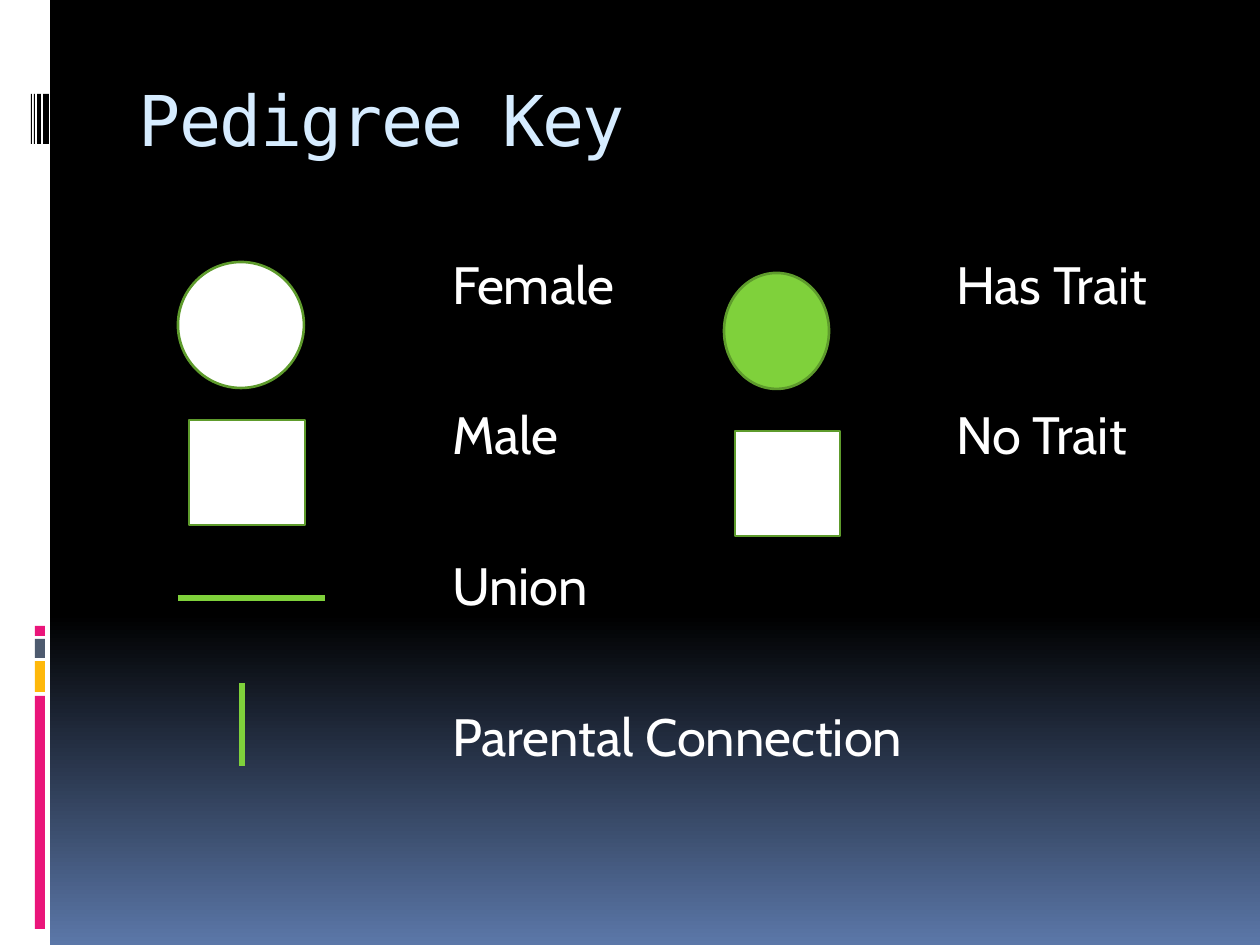
"""Builds the pedigree key slide."""
import dataclasses

import pptx
import pptx.dml.color
import pptx.enum.shapes
import pptx.enum.text
import pptx.oxml.ns
import pptx.util
from lxml import etree

SHAPES = pptx.enum.shapes.MSO_SHAPE


@dataclasses.dataclass(frozen=True)
class Theme:
    white: str = "FFFFFF"
    black: str = "000000"
    blue: str = "5B77A8"
    pink: str = "EA157A"
    amber: str = "FEB80A"
    slate: str = "4E5B6F"
    green: str = "7FD13B"
    outline: str = "5E9B2C"
    title: str = "D6ECFF"
    title_font: str = "DejaVu Sans Mono"
    body_font: str = "Cabin"
    title_size: int = 40
    body_size: int = 30


def px(length):
    return pptx.util.Emu(round(length * 914400 / 126))


def rgb(color):
    return pptx.dml.color.RGBColor.from_string(color)


def write(para, text, font, size, color, spacing=0):
    span = para.add_run()
    span.text = text
    span.font.name = font
    span.font.size = pptx.util.Pt(size)
    span.font.color.rgb = rgb(color)
    if spacing:
        span.font._element.set("spc", str(spacing))


class Slide:
    def __init__(self, deck, theme):
        self.theme = theme
        self.page = deck.slides.add_slide(deck.slide_layouts[1])

    def background(self, start, end, hold, angle):
        fill = self.page.background.fill
        fill.gradient()
        fill.gradient_angle = angle
        for stop, color, position in zip(fill.gradient_stops, (start, end), (hold, 1)):
            stop.color.rgb = rgb(color)
            stop.position = position

    def place(self, box, left, top, width, height, inset_left, inset_top):
        box.left, box.top, box.width, box.height = map(px, (left, top, width, height))
        frame = box.text_frame
        frame.word_wrap = True
        frame.auto_size = pptx.enum.text.MSO_AUTO_SIZE.NONE
        frame.vertical_anchor = pptx.enum.text.MSO_ANCHOR.TOP
        frame.margin_left, frame.margin_top = px(inset_left), px(inset_top)
        return frame

    def title(self, text, *area, **insets):
        para = self.place(self.page.shapes.title, *area, **insets).paragraphs[0]
        para.alignment = pptx.enum.text.PP_ALIGN.LEFT
        write(para, text, font=self.theme.title_font, size=self.theme.title_size,
              color=self.theme.title, spacing=-100)

    def labels(self, rows, *area, tab, gap, **insets):
        frame = self.place(self.page.placeholders[1], *area, **insets)
        for index, row in enumerate(rows):
            para = frame.add_paragraph() if index else frame.paragraphs[0]
            para.space_before = pptx.util.Pt(0)
            para.space_after = pptx.util.Pt(gap)
            properties = para._p.get_or_add_pPr()
            for name, value in (("marL", 0), ("indent", 0), ("defTabSz", px(tab))):
                properties.set(name, str(value))
            etree.SubElement(properties, pptx.oxml.ns.qn("a:buNone"))
            write(para, "\t".join(row), font=self.theme.body_font,
                  size=self.theme.body_size, color=self.theme.white)

    def shape(self, kind, left, top, width, height, fill, line=None):
        shape = self.page.shapes.add_shape(kind, *map(px, (left, top, width, height)))
        shape.shadow.inherit = False
        shape.fill.solid()
        shape.fill.fore_color.rgb = rgb(fill)
        if line:
            shape.line.color.rgb = rgb(line)
            shape.line.width = pptx.util.Pt(1.5)
        else:
            shape.line.fill.background()

    def line(self, *ends):
        line = self.page.shapes.add_connector(
            pptx.enum.shapes.MSO_CONNECTOR.STRAIGHT, *map(px, ends))
        line.line.color.rgb = rgb(self.theme.green)
        line.line.width = pptx.util.Pt(3)
        etree.SubElement(line._element.spPr, pptx.oxml.ns.qn("a:effectLst"))


def main():
    theme = Theme()
    deck = pptx.Presentation()
    deck.slide_width, deck.slide_height = px(1260), px(945)
    slide = Slide(deck, theme)
    slide.background(theme.black, theme.blue, hold=0.65, angle=270)

    slide.shape(SHAPES.RECTANGLE, 0, 0, 50, 945, theme.white)
    for top, height, color in ((696, 233, theme.pink), (661, 31, theme.amber),
                               (639, 19, theme.slate), (626, 10, theme.pink)):
        slide.shape(SHAPES.RECTANGLE, 35, top, 10, height, color)
    for left, width in ((43, 6), (37, 4), (34, 1), (31, 1)):
        slide.shape(SHAPES.RECTANGLE, left, 94, width, 50, theme.black)

    slide.title("Pedigree Key", 126, 71, 1071, 126, inset_left=13, inset_top=6)
    rows = (("Female", "Has Trait"), ("Male", "No Trait"),
            ("Union",), ("Parental Connection",))
    slide.labels(rows, 126, 246, 1071, 630, tab=504, gap=50,
                 inset_left=326, inset_top=6)

    for kind, left, top, width, height, fill in (
            (SHAPES.OVAL, 178, 262, 126, 126, theme.white),
            (SHAPES.RECTANGLE, 189, 420, 116, 105, theme.white),
            (SHAPES.OVAL, 724, 273, 105, 116, theme.green),
            (SHAPES.RECTANGLE, 735, 431, 105, 105, theme.white)):
        slide.shape(kind, left, top, width, height, fill, line=theme.outline)
    slide.line(178, 598, 325, 598)
    slide.line(242, 683, 242, 766)
    deck.save("out.pptx")


if __name__ == "__main__":
    main()
